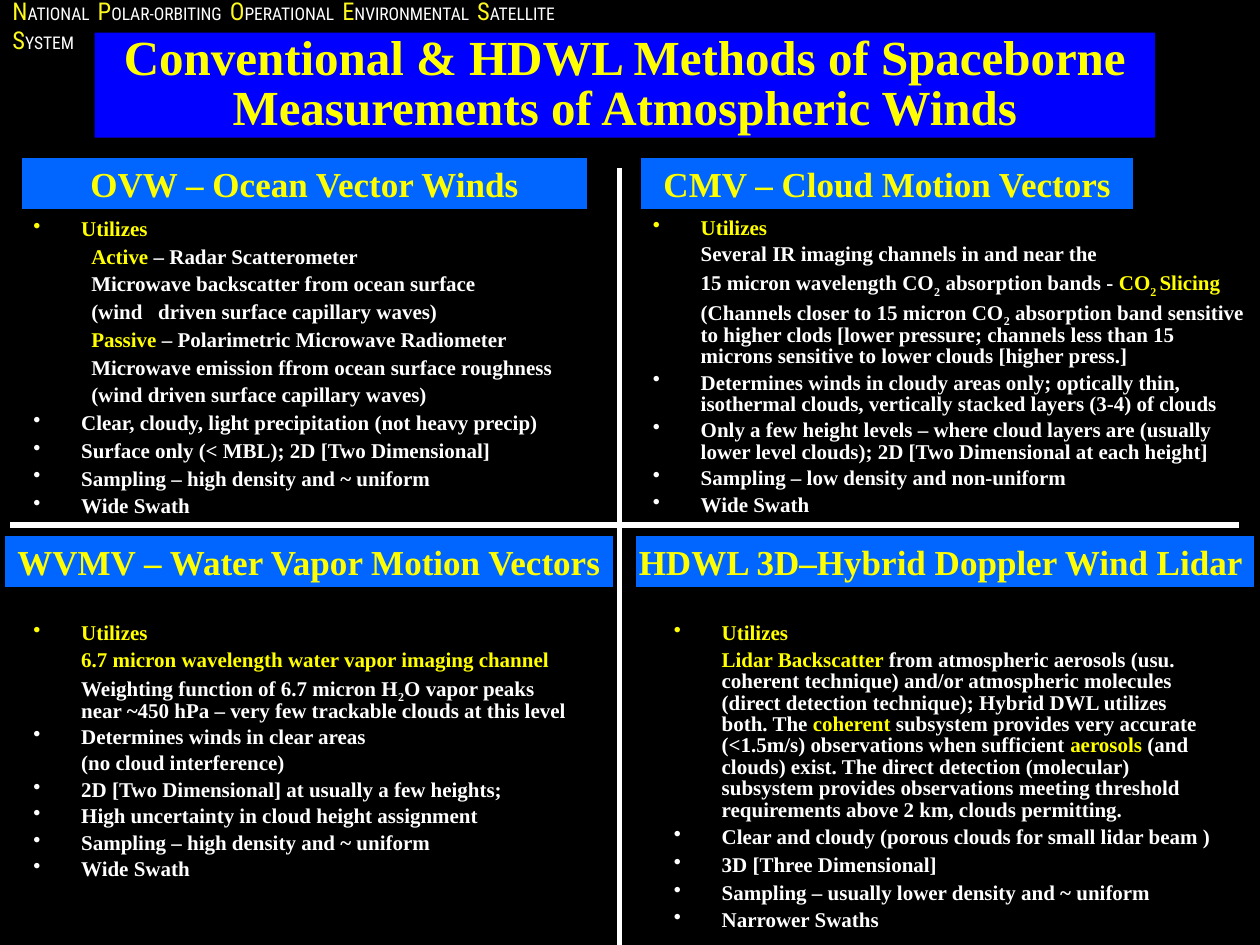
"""Build a slide comparing four methods of measuring atmospheric winds."""
import pptx
import pptx.dml.color
import pptx.enum.shapes
import pptx.enum.text
import pptx.oxml
import pptx.oxml.ns
import pptx.util

HEADER = ["National", "Polar-Orbiting", "Operational", "Environmental", "Satellite", "System"]
TITLE = "Conventional & HDWL Methods of Spaceborne Measurements of Atmospheric Winds"

BANNERS = [
    ("OVW – Ocean Vector Winds", (2, 15, 54, 5)),
    ("HDWL 3D–Hybrid Doppler Wind Lidar ", (60.5, 51, 59, 5)),
    ("CMV – Cloud Motion Vectors", (61, 15, 47, 5)),
    ("WVMV – Water Vapor Motion Vectors", (0.4, 51, 58, 5)),
]

OCEAN = [
    "•*Utilizes*",
    ">*Active* – Radar Scatterometer",
    ">Microwave backscatter from ocean surface",
    ">(wind   driven surface capillary waves)",
    ">*Passive* – Polarimetric Microwave Radiometer",
    ">Microwave emission ffrom ocean surface roughness",
    ">(wind driven surface capillary waves)",
    "•Clear, cloudy, light precipitation (not heavy precip)",
    "•Surface only (< MBL); 2D [Two Dimensional]",
    "•Sampling – high density and ~ uniform",
    "•Wide Swath",
]
CLOUD = [
    "•*Utilizes*",
    "Several IR imaging channels in and near the",
    "15 micron wavelength CO_2_ absorption bands - *CO_2 _Slicing*",
    "(Channels closer to 15 micron CO_2_ absorption band sensitive to higher clods "
    "[lower pressure; channels less than 15 microns sensitive to lower clouds [higher press.]",
    "•Determines winds in cloudy areas only; optically thin, isothermal clouds, "
    "vertically stacked layers (3-4) of clouds",
    "•Only a few height levels – where cloud layers are (usually lower level clouds); "
    "2D [Two Dimensional at each height]",
    "•Sampling – low density and non-uniform",
    "•Wide Swath",
]
VAPOR = [
    "•*Utilizes*",
    "*6.7 micron wavelength water vapor imaging channel*",
    "Weighting function of 6.7 micron H_2_O vapor peaks near ~450 hPa – "
    "very few trackable clouds at this level",
    "•Determines winds in clear areas",
    "(no cloud interference)",
    "•2D [Two Dimensional] at usually a few heights;",
    "•High uncertainty in cloud height assignment",
    "•Sampling – high density and ~ uniform",
    "•Wide Swath",
]
LIDAR = [
    "•*Utilizes*",
    "*Lidar Backscatter *from atmospheric aerosols (usu. coherent technique) and/or "
    "atmospheric molecules (direct detection technique); Hybrid DWL utilizes both. The "
    "*coherent* subsystem provides very accurate (<1.5m/s) observations when sufficient "
    "*aerosols* (and clouds) exist. The direct detection (molecular) subsystem provides "
    "observations meeting threshold requirements above 2 km, clouds permitting.",
    "•Clear and cloudy (porous clouds for small lidar beam )",
    "•3D [Three Dimensional]",
    "•Sampling – usually lower density and ~ uniform",
    "•Narrower Swaths",
]


def color(value):
    """Turn a hex string into a colour."""
    return pptx.dml.color.RGBColor.from_string(value)


class WindSlide:
    """Hold the style, the current slide and its grid of 120 columns by 90 rows."""

    serif, sans = "Times New Roman", "Roboto Condensed"
    yellow, white, black = "FFFF00", "FFFFFF", "000000"
    header_yellow, title_blue, banner_blue = "FDF81D", "0000FF", "0066FF"
    hanging, inset = 0.38, 0.08

    def __init__(self, deck):
        """Add a title-only slide with a black background."""
        self.column = deck.slide_width / 120
        self.row = deck.slide_height / 90
        self.slide = deck.slides.add_slide(deck.slide_layouts[5])
        self.slide.background.fill.solid()
        self.slide.background.fill.fore_color.rgb = color(self.black)

    def place(self, left, top, width, height):
        """Convert grid units to lengths on the slide."""
        return (int(left * self.column), int(top * self.row),
                int(width * self.column), int(height * self.row))

    def format(self, span, size, shade, font=serif, bold=True):
        """Set the font of one run."""
        span.font.name, span.font.size, span.font.bold = font, pptx.util.Pt(size), bold
        span.font.color.rgb = color(shade)

    def add_span(self, para, text, size, shade, **style):
        """Append a formatted run to a paragraph."""
        span = para.add_run()
        span.text = text
        self.format(span, size, shade, **style)
        return span

    def heading(self, shape, text, size, fill):
        """Fill a shape and center a yellow heading in it."""
        shape.fill.solid()
        shape.fill.fore_color.rgb = color(fill)
        frame = shape.text_frame
        frame.text = text
        frame.vertical_anchor = pptx.enum.text.MSO_ANCHOR.MIDDLE
        frame.auto_size = pptx.enum.text.MSO_AUTO_SIZE.NONE
        para = frame.paragraphs[0]
        para.alignment = pptx.enum.text.PP_ALIGN.CENTER
        self.format(para.runs[0], size, self.yellow)
        return para

    def title(self, text, area):
        """Move and format the title placeholder."""
        shape = self.slide.shapes.title
        shape.left, shape.top, shape.width, shape.height = self.place(*area)
        self.heading(shape, text, 28, self.title_blue).line_spacing = 0.85

    def banner(self, text, area):
        """Add the heading bar of one quadrant."""
        kind = pptx.enum.shapes.MSO_SHAPE.RECTANGLE
        shape = self.slide.shapes.add_shape(kind, *self.place(*area))
        shape.shadow.inherit = False
        shape.line.color.rgb = color(self.black)
        shape.line.width = pptx.util.Pt(0.75)
        self.heading(shape, text, 20, self.banner_blue)
        shape.text_frame.word_wrap = False

    def text_frame(self, area):
        """Add a wrapping text box and return its frame."""
        frame = self.slide.shapes.add_textbox(*self.place(*area)).text_frame
        frame.word_wrap = True
        return frame

    def header(self, words, area):
        """Write words in capitals with a larger yellow initial."""
        para = self.text_frame(area).paragraphs[0]
        for index, word in enumerate(words):
            gap = "  " if index < len(words) - 1 else ""
            self.add_span(para, word[0], 14, self.header_yellow, font=self.sans, bold=False)
            self.add_span(para, word[1:].upper() + gap, 10, self.white, font=self.sans, bold=False)

    def divider(self, start, end):
        """Draw a white line between two grid points."""
        kind = pptx.enum.shapes.MSO_CONNECTOR.STRAIGHT
        line = self.slide.shapes.add_connector(kind, *self.place(*start, *end))
        line.line.color.rgb = color(self.white)
        line.line.width = pptx.util.Pt(3)
        pptx.oxml.ns.qn("a:effectLst")
        line._element.spPr.append(pptx.oxml.parse_xml(
            '<a:effectLst xmlns:a="http://schemas.openxmlformats.org/drawingml/2006/main"/>'))

    def indent(self, para, mark):
        """Give a paragraph its bullet or its continuation indent."""
        properties = para._p.get_or_add_pPr()
        left = self.hanging + (self.inset if mark == ">" else 0)
        first = -self.hanging if mark == "•" else 0
        properties.set("marL", str(pptx.util.Inches(left)))
        properties.set("indent", str(pptx.util.Inches(first)))
        if mark == "•":
            bullet = properties.makeelement(pptx.oxml.ns.qn("a:buChar"), {"char": mark})
            properties.append(bullet)

    def body(self, lines, area, spacings):
        """Write lines where *x* is yellow, _x_ is subscript and the first sign sets the indent."""
        frame = self.text_frame(area)
        for index, line in enumerate(lines):
            para = frame.add_paragraph() if index else frame.paragraphs[0]
            para.line_spacing = spacings[min(index // 2, 1)]
            para.space_before = pptx.util.Pt(2.9)
            self.indent(para, line[0])
            for part, words in enumerate(line.lstrip("•>").split("*")):
                for piece, text in enumerate(words.split("_")):
                    if text:
                        shade = self.yellow if part % 2 else self.white
                        span = self.add_span(para, text, 12, shade)
                        if piece % 2:
                            span.font._element.set("baseline", "-25000")


def main():
    """Build and save the deck."""
    deck = pptx.Presentation()
    deck.slide_width, deck.slide_height = pptx.util.Inches(10), pptx.util.Inches(7.5)
    page = WindSlide(deck)
    page.header(HEADER, (0, -1, 55.5, 4))
    page.title(TITLE, (9, 3.1, 101, 10))
    page.divider((1, 50), (118, 50))
    page.divider((59, 16), (59, 90))
    for text, area in BANNERS:
        page.banner(text, area)
    page.body(OCEAN, (2, 20.2, 54, 28), (0.9, 0.9))
    page.body(CLOUD, (61, 20.2, 59, 28), (0.85, 0.85))
    page.body(VAPOR, (2, 58.8, 54, 28), (0.85, 0.85))
    page.body(LIDAR, (63, 58.8, 54, 28), (0.85, 0.9))
    deck.save("out.pptx")


if __name__ == "__main__":
    main()
